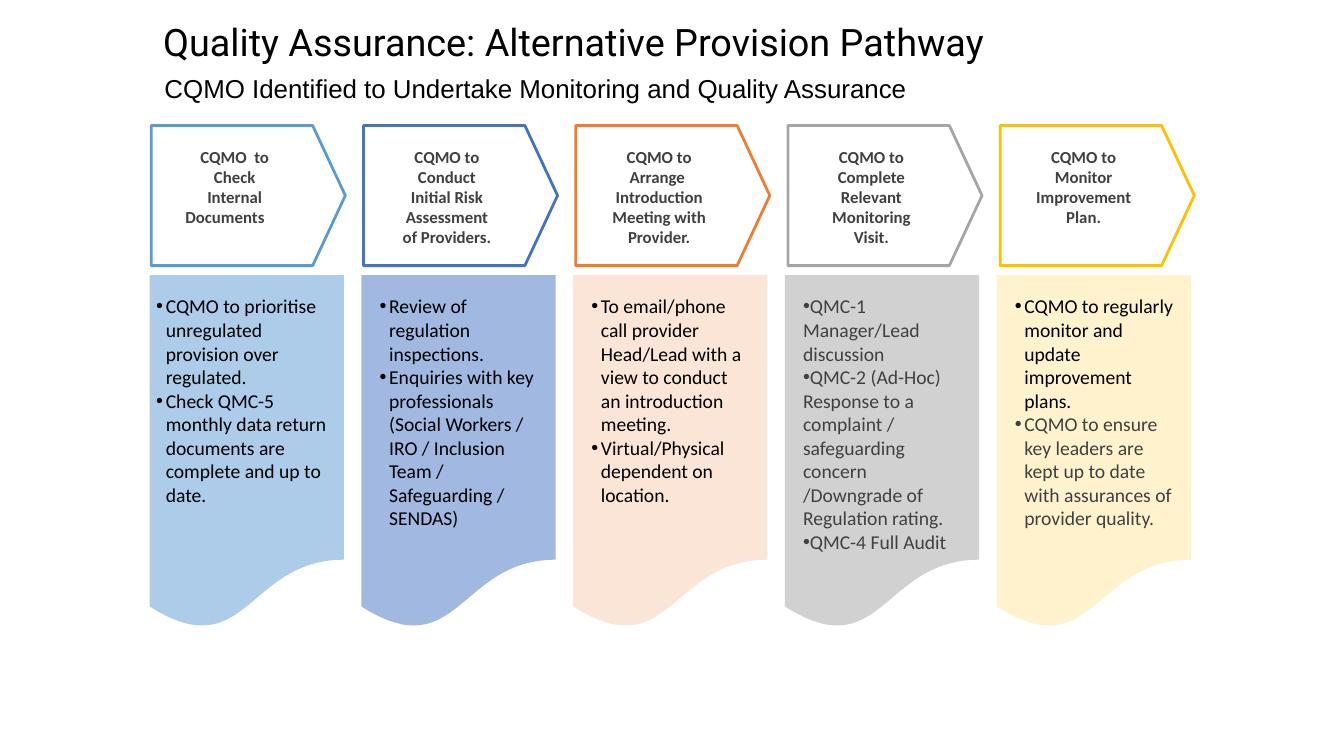
import pptx
import pptx.util
import pptx.dml.color
import pptx.enum.shapes
import pptx.enum.text
import pptx.oxml.ns
from lxml import etree

Inches = pptx.util.Inches
Shape = pptx.enum.shapes.MSO_SHAPE
Anchor = pptx.enum.text.MSO_ANCHOR
Align = pptx.enum.text.PP_ALIGN
Fit = pptx.enum.text.MSO_AUTO_SIZE

WIDTH, HEIGHT = 26.66, 15
ARROW_GRID = {"left": 3, "top": 2.49, "width": 3.85, "height": 2.78, "pitch": 4.21}
CARD_GRID = {"left": 2.97, "top": 5.46, "width": 3.85, "height": 7.04, "pitch": 4.2}

# Text areas as shares of the arrow or card around them
ARROW_TEXT = (0.15, 0.13, 0.56, 0.76)
CARD_TEXT = (0.068, 0.047, 0.868, 0.75)
WIDE_CARD_TEXT = (0.008, 0.047, 0.995, 0.75)

COLORS = {
    "black": "000000", "gray_text": "404040",
    "sky": "5B9BD5", "blue": "4472C4", "orange": "ED7D31",
    "gray": "A5A5A5", "gold": "FFC000",
    "peach": "FBE5D6", "cream": "FFF2CC",
}

# Each stage: line, card fill, card opacity, heading, bullets with colours,
# bullet indent, share of the card for text
STAGES = [
    {"line": "sky", "fill": "sky", "opacity": 50, "indent": 0.19, "area": WIDE_CARD_TEXT,
     "heading": "CQMO  to Check Internal Documents ", "tail": "\t ",
     "bullets": [("CQMO to prioritise unregulated provision over regulated.", "black"),
                 ("Check QMC-5 monthly data return documents are complete and up to date.", "black")]},
    {"line": "blue", "fill": "blue", "opacity": 50, "indent": 0.19, "area": CARD_TEXT,
     "heading": "CQMO to Conduct Initial Risk Assessment of Providers.",
     "bullets": [("Review of regulation inspections.", "black"),
                 ("Enquiries with key professionals (Social Workers / IRO / Inclusion Team / "
                  "Safeguarding / SENDAS)", "black")]},
    {"line": "orange", "fill": "peach", "opacity": 100, "indent": 0.19, "area": CARD_TEXT,
     "heading": "CQMO to Arrange  Introduction Meeting with Provider.",
     "bullets": [("To email/phone call provider Head/Lead with a view to conduct an "
                  "introduction meeting.", "black"),
                 ("Virtual/Physical dependent on location.", "black")]},
    {"line": "gray", "fill": "gray", "opacity": 50, "indent": 0, "area": CARD_TEXT,
     "heading": "CQMO to Complete Relevant Monitoring Visit.",
     "bullets": [("QMC-1 Manager/Lead discussion", "gray_text"),
                 ("QMC-2 (Ad-Hoc) Response to a complaint / safeguarding concern "
                  "/Downgrade of Regulation rating.", "gray_text"),
                 ("QMC-4 Full Audit", "gray_text")]},
    {"line": "gold", "fill": "cream", "opacity": 100, "indent": 0.19, "area": CARD_TEXT,
     "heading": "CQMO to Monitor Improvement Plan.",
     "bullets": [("CQMO to regularly monitor and update improvement plans.", "black"),
                 ("CQMO to ensure key leaders are kept up to date with assurances of "
                  "provider quality.", "gray_text")]},
]


def color(name):
    return pptx.dml.color.RGBColor.from_string(COLORS[name])


def cell(grid, column):
    return (grid["left"] + column * grid["pitch"], grid["top"], grid["width"], grid["height"])


def inside(box, shares):
    left, top, width, height = box
    return (left + shares[0] * width, top + shares[1] * height,
            shares[2] * width, shares[3] * height)


def add_text_frame(page, box):
    frame = page.shapes.add_textbox(*map(Inches, box)).text_frame
    frame.word_wrap = True
    return frame


def set_font(font, name, size, color_name, bold=False):
    font.name, font.size, font.bold = name, pptx.util.Pt(size), bold
    font.color.rgb = color(color_name)


def add_bullet(para, indent):
    properties = para._p.get_or_add_pPr()
    properties.set("marL", str(Inches(indent)))
    properties.set("indent", str(-Inches(indent or 0.16)))
    for tag, key, value in (("a:buFont", "typeface", "Arial"), ("a:buChar", "char", "•")):
        etree.SubElement(properties, pptx.oxml.ns.qn(tag)).set(key, value)


def add_titles(page, box):
    # Title
    frame = add_text_frame(page, inside(box, (0.113, 0.031, 0.719, 0.057)))
    frame.vertical_anchor = Anchor.BOTTOM
    para = frame.paragraphs[0]
    para.line_spacing = 0.8
    for text, size in ((" ", 36), ("Quality Assurance: Alternative Provision Pathway", 54)):
        span = para.add_run()
        span.text = text
        set_font(span.font, "Roboto", size, "black")

    # Subtitle
    frame = add_text_frame(page, inside(box, (0.108, 0.101, 0.581, 0.038)))
    frame.vertical_anchor = Anchor.BOTTOM
    para = frame.paragraphs[0]
    para.text = "CQMO Identified to Undertake Monitoring and Quality Assurance"
    para.alignment, para.line_spacing = Align.CENTER, 0.7
    set_font(para.font, "Arial", 37, "black")


def add_arrow(page, box, stage):
    arrow = page.shapes.add_shape(Shape.PENTAGON, *map(Inches, box))
    arrow.adjustments[0] = 0.233
    arrow.shadow.inherit = False
    arrow.fill.background()
    arrow.line.color.rgb = color(stage["line"])
    arrow.line.width = pptx.util.Pt(4)

    frame = add_text_frame(page, inside(box, ARROW_TEXT))
    frame.auto_size = Fit.SHAPE_TO_FIT_TEXT
    para = frame.paragraphs[0]
    para.text = stage["heading"]
    para.alignment = Align.CENTER
    set_font(para.font, "Calibri", 24, "gray_text", bold=True)
    if "tail" in stage:
        span = para.add_run()
        span.text = stage["tail"]
        span.font.size = pptx.util.Pt(18)


def add_card(page, box, stage):
    card = page.shapes.add_shape(Shape.FLOWCHART_DOCUMENT, *map(Inches, box))
    card.shadow.inherit = False
    card.line.fill.background()
    card.fill.solid()
    card.fill.fore_color.rgb = color(stage["fill"])
    if stage["opacity"] < 100:
        fill = card._element.spPr.find(".//" + pptx.oxml.ns.qn("a:srgbClr"))
        alpha = etree.SubElement(fill, pptx.oxml.ns.qn("a:alpha"))
        alpha.set("val", str(stage["opacity"] * 1000))

    frame = add_text_frame(page, inside(box, stage["area"]))
    frame.auto_size = Fit.SHAPE_TO_FIT_TEXT
    for index, (text, color_name) in enumerate(stage["bullets"]):
        para = frame.add_paragraph() if index else frame.paragraphs[0]
        para.text = text
        add_bullet(para, stage["indent"])
        set_font(para.font, "Calibri", 28, color_name)


def main():
    deck = pptx.Presentation()
    deck.slide_width, deck.slide_height = Inches(WIDTH), Inches(HEIGHT)
    page = deck.slides.add_slide(deck.slide_layouts[6])
    add_titles(page, (0, 0, WIDTH, HEIGHT))
    for column, stage in enumerate(STAGES):
        add_arrow(page, cell(ARROW_GRID, column), stage)
        add_card(page, cell(CARD_GRID, column), stage)
    deck.save("out.pptx")


if __name__ == "__main__":
    main()
